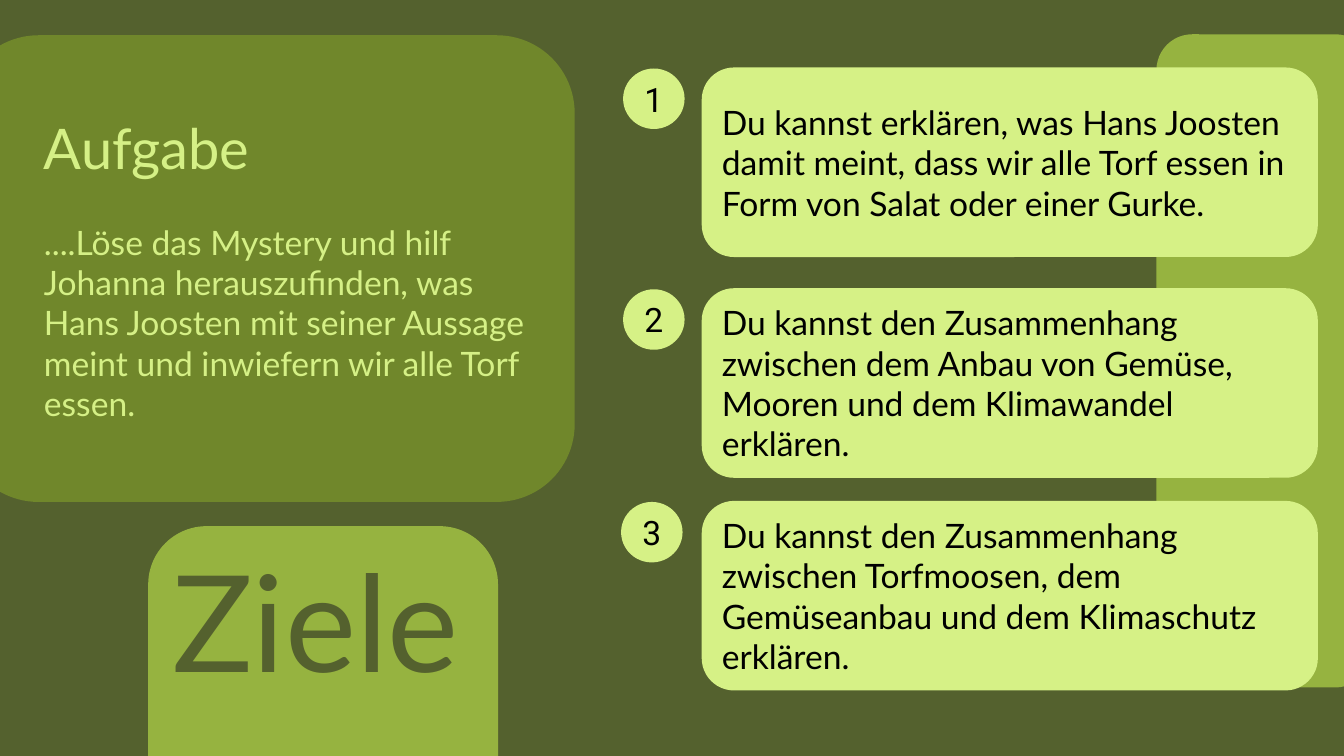
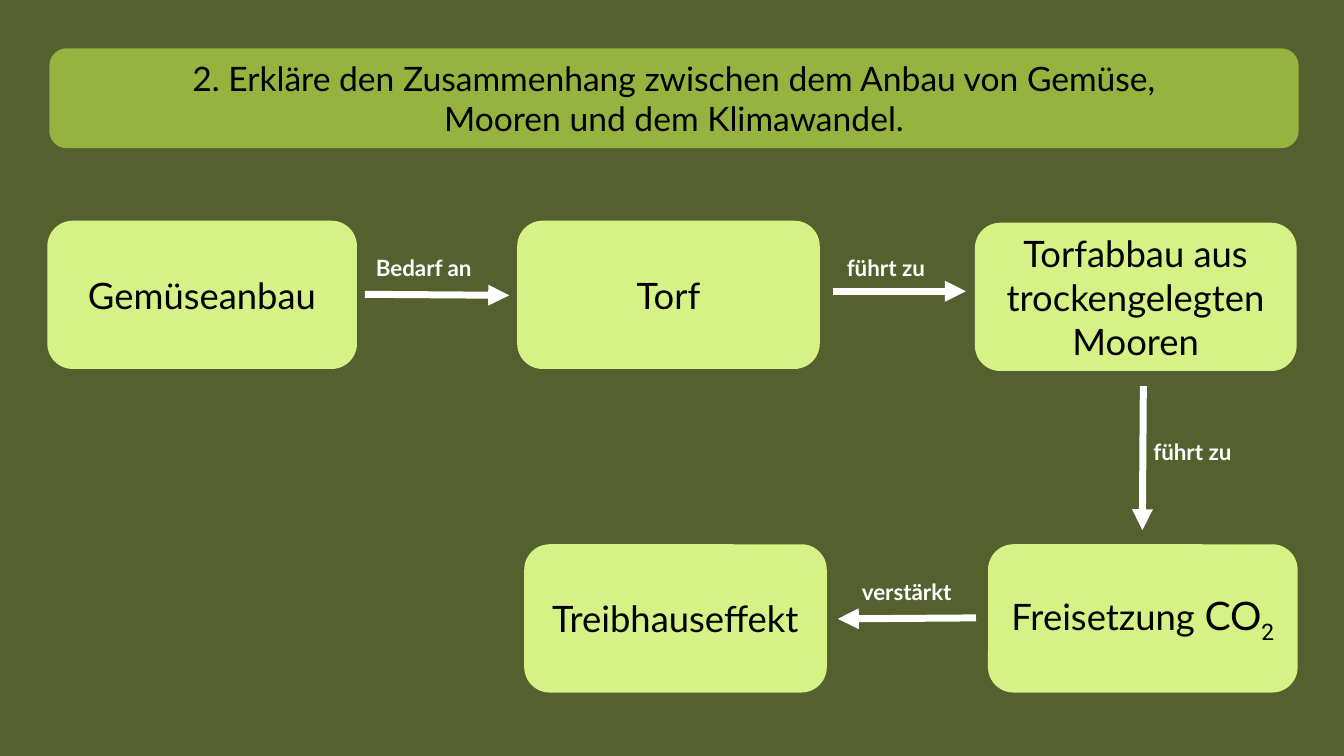
from dataclasses import dataclass

from lxml import etree
from pptx import Presentation
from pptx.dml.color import RGBColor
from pptx.enum.shapes import MSO_CONNECTOR, MSO_SHAPE
from pptx.enum.text import MSO_ANCHOR, PP_ALIGN
from pptx.oxml.ns import qn
from pptx.presentation import Presentation as PresentationType
from pptx.shapes.autoshape import Shape
from pptx.slide import Slide
from pptx.text.text import _Paragraph as Paragraph
from pptx.util import Inches, Pt

COLORS = {
    "background": "54612E",
    "panel": "70872B",
    "accent": "96B340",
    "card": "D6F186",
    "panel_text": "D5F086",
    "black": "000000",
    "white": "FFFFFF",
}
TEXT_FONT = "Lato"
NUMBER_FONT = "Roboto"


@dataclass(frozen=True)
class Box:
    left: float
    top: float
    width: float
    height: float


@dataclass(frozen=True)
class Node:
    box: Box
    text: str


@dataclass(frozen=True)
class Link:
    start: tuple[float, float]
    end: tuple[float, float]
    label: str
    label_box: Box


GOAL_TOPS = (0.68, 2.87, 4.98)
GOALS = (
    "Du kannst erklären, was Hans Joosten damit meint, dass wir alle Torf essen in "
    "Form von Salat oder einer Gurke.",
    "Du kannst den Zusammenhang zwischen dem Anbau von Gemüse, Mooren und dem "
    "Klimawandel erklären.",
    "Du kannst den Zusammenhang zwischen Torfmoosen, dem Gemüseanbau und dem "
    "Klimaschutz erklären.",
)
TASK = (
    "....Löse das Mystery und hilf Johanna herauszufinden, was Hans Joosten mit seiner "
    "Aussage meint und inwiefern wir alle Torf essen."
)

NODE_HEIGHT = 1.45
NODES = (
    Node(Box(0.48, 2.2, 3.05, NODE_HEIGHT), "Gemüseanbau"),
    Node(Box(5.14, 2.2, 2.98, NODE_HEIGHT), "Torf"),
    Node(Box(9.68, 2.22, 3.17, NODE_HEIGHT), "Torfabbau aus trockengelegten Mooren"),
    Node(Box(5.21, 5.41, 2.98, NODE_HEIGHT), "Treibhauseffekt"),
)
EMISSION_BOX = Box(9.81, 5.41, 3.05, NODE_HEIGHT)
LINKS = (
    Link((3.62, 2.92), (5.05, 2.93), "Bedarf an", Box(3.63, 2.47, 1.7, 0.37)),
    Link((8.26, 2.89), (9.58, 2.89), "führt zu", Box(8.3, 2.47, 1.38, 0.37)),
    Link((11.34, 3.83), (11.33, 5.26), "führt zu", Box(11.34, 4.3, 1.59, 0.37)),
    Link((9.68, 6.13), (8.31, 6.14), "verstärkt", Box(8.45, 5.69, 1.51, 0.37)),
)


def color(name: str) -> RGBColor:
    return RGBColor.from_string(COLORS[name])


def style(
    paragraph: Paragraph,
    size: int,
    font_color: str = "black",
    font_name: str = TEXT_FONT,
    bold: bool = False,
    alignment: PP_ALIGN = PP_ALIGN.LEFT,
) -> None:
    paragraph.alignment = alignment
    paragraph.font.name = font_name
    paragraph.font.size = Pt(size)
    paragraph.font.bold = bold
    paragraph.font.color.rgb = color(font_color)


def add_panel(
    slide: Slide,
    box: Box,
    fill: str,
    outlined: bool = False,
    kind: MSO_SHAPE = MSO_SHAPE.ROUNDED_RECTANGLE,
) -> Shape:
    shape = slide.shapes.add_shape(
        kind, Inches(box.left), Inches(box.top), Inches(box.width), Inches(box.height)
    )
    shape.shadow.inherit = False
    shape.fill.solid()
    shape.fill.fore_color.rgb = color(fill)
    if outlined:
        shape.line.color.rgb = color(fill)
        shape.line.width = Pt(1.5)
    else:
        shape.line.fill.background()
    frame = shape.text_frame
    frame.word_wrap = True
    frame.vertical_anchor = MSO_ANCHOR.MIDDLE
    frame.margin_top = frame.margin_bottom = 0
    return shape


def write(shape: Shape, lines: tuple[str, ...], size: int, alignment: PP_ALIGN) -> None:
    shape.text_frame.text = "\n".join(lines)
    for paragraph in shape.text_frame.paragraphs:
        style(paragraph, size, alignment=alignment)


def add_label(
    slide: Slide, box: Box, text: str, size: int, font_color: str, bold: bool = False
) -> None:
    label = slide.shapes.add_textbox(
        Inches(box.left), Inches(box.top), Inches(box.width), Inches(box.height)
    )
    label.text_frame.word_wrap = True
    label.text_frame.text = text
    style(label.text_frame.paragraphs[0], size, font_color, bold=bold)


def add_number(slide: Slide, number: int, left: float, top: float) -> None:
    circle = add_panel(slide, Box(left, top, 0.61, 0.6), "card", kind=MSO_SHAPE.OVAL)
    frame = circle.text_frame
    frame.margin_left = frame.margin_right = 0
    frame.text = str(number)
    style(frame.paragraphs[0], 24, font_name=NUMBER_FONT, alignment=PP_ALIGN.CENTER)


def add_arrow(slide: Slide, link: Link) -> None:
    arrow = slide.shapes.add_connector(
        MSO_CONNECTOR.STRAIGHT,
        *(Inches(value) for value in link.start + link.end),
    )
    arrow.line.color.rgb = color("white")
    arrow.line.width = Pt(5)
    properties = arrow.line._get_or_add_ln()
    etree.SubElement(properties, qn("a:tailEnd"), type="triangle")
    etree.SubElement(arrow._element.spPr, qn("a:effectLst"))


def add_slide(presentation: PresentationType) -> Slide:
    slide = presentation.slides.add_slide(presentation.slide_layouts[6])
    slide.background.fill.solid()
    slide.background.fill.fore_color.rgb = color("background")
    return slide


def add_task(slide: Slide) -> None:
    panel = add_panel(slide, Box(-0.39, 0.35, 6.09, 4.63), "panel")
    panel.text_frame.margin_left = Inches(0.6)
    panel.text_frame.text = f"Aufgabe\n{TASK}"
    heading, body = panel.text_frame.paragraphs
    style(heading, 40, "panel_text")
    style(body, 24, "panel_text")
    heading.space_after = Pt(29)


def build_goals_slide(presentation: PresentationType) -> None:
    slide = add_slide(presentation)
    add_panel(slide, Box(11.47, 0.34, 2.13, 6.48), "accent")
    add_panel(slide, Box(1.47, 5.22, 3.47, 3.97), "accent")
    add_label(slide, Box(1.61, 5.29, 3.5, 1.7), "Ziele", 96, "background")
    for number, (top, goal) in enumerate(zip(GOAL_TOPS, GOALS), start=1):
        card = add_panel(slide, Box(6.97, top, 6.09, 1.86), "card", outlined=True)
        write(card, (goal,), 24, PP_ALIGN.LEFT)
        add_number(slide, number, 6.16 if number == 3 else 6.18, top)
    add_task(slide)


def add_emission_node(slide: Slide) -> None:
    shape = add_panel(slide, EMISSION_BOX, "card", outlined=True)
    paragraph = shape.text_frame.paragraphs[0]
    style(paragraph, 26, alignment=PP_ALIGN.CENTER)
    paragraph.add_run().text = "Freisetzung "
    formula = paragraph.add_run()
    formula.text = "CO"
    formula.font.size = Pt(28)
    subscript = paragraph.add_run()
    subscript.text = "2"
    subscript.font.size = Pt(28)
    subscript.font.name = NUMBER_FONT
    subscript._r.get_or_add_rPr().set("baseline", "-25000")


def build_diagram_slide(presentation: PresentationType) -> None:
    slide = add_slide(presentation)
    title = add_panel(slide, Box(0.5, 0.49, 12.37, 0.97), "accent", outlined=True)
    title_lines = (
        "2. Erkläre den Zusammenhang zwischen dem Anbau von Gemüse,",
        "Mooren und dem Klimawandel.",
    )
    write(title, title_lines, 24, PP_ALIGN.CENTER)
    for node in NODES:
        shape = add_panel(slide, node.box, "card", outlined=True)
        write(shape, (node.text,), 26, PP_ALIGN.CENTER)
    add_emission_node(slide)
    for link in LINKS:
        add_label(slide, link.label_box, link.label, 16, "white", bold=True)
        add_arrow(slide, link)


def main() -> None:
    presentation = Presentation()
    presentation.slide_width = Inches(13.33)
    presentation.slide_height = Inches(7.5)
    build_goals_slide(presentation)
    build_diagram_slide(presentation)
    presentation.save("out.pptx")


if __name__ == "__main__":
    main()
